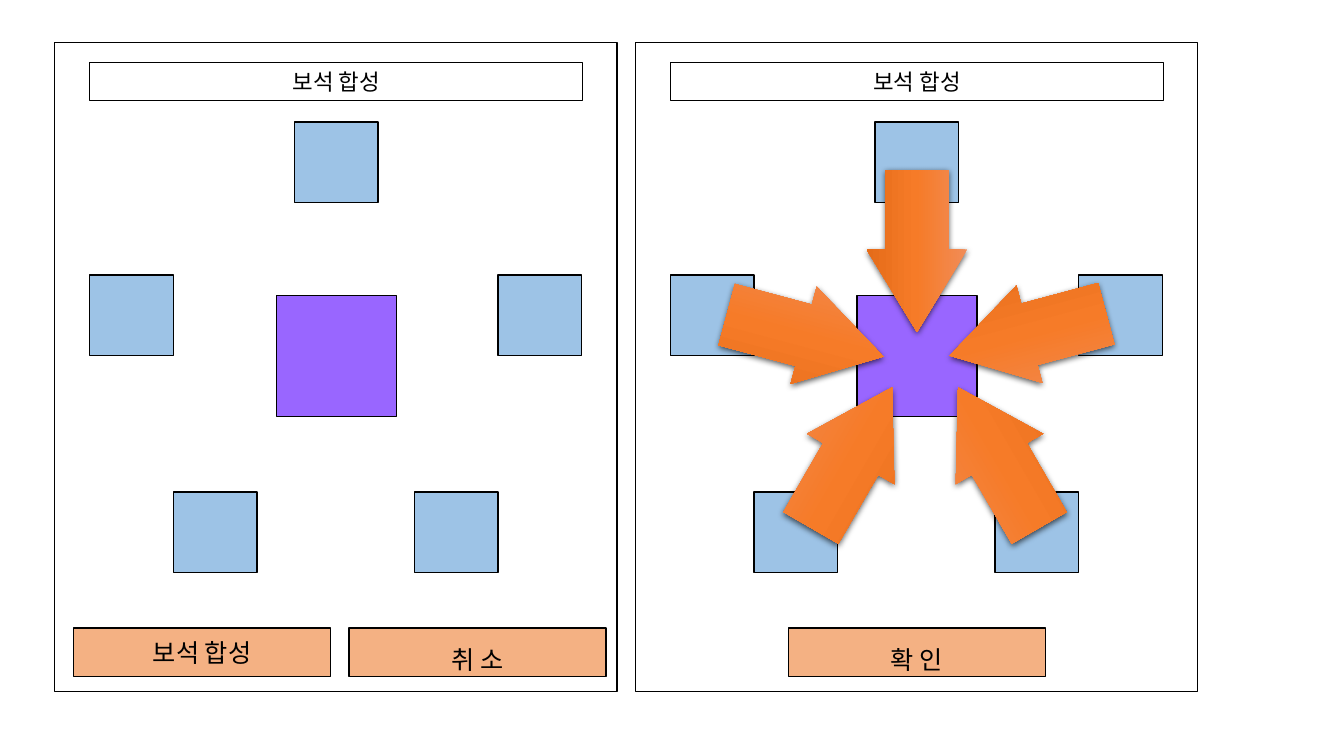
import lxml.etree
import pptx
import pptx.dml.color
import pptx.enum.shapes
import pptx.enum.text
import pptx.oxml.ns
import pptx.util

Inches = pptx.util.Inches
Pt = pptx.util.Pt
SHAPE = pptx.enum.shapes.MSO_SHAPE
qn = pptx.oxml.ns.qn

FONT = "Noto Sans CJK KR"
BLACK, WHITE = "000000", "FFFFFF"
BLUE, PURPLE, PEACH = "9DC3E6", "9966FF", "F4B183"
PANEL_LEFTS = (0.54, 6.3)

# Offsets from the panel's left edge, then tops on the slide
GEMS = ((2.38, 1.21), (0.35, 2.73), (4.4, 2.73), (1.18, 4.88), (3.57, 4.88))
# Left, top, rotation
ARROWS = (
    (7.18, 2.83, 15),
    (7.64, 4.04, 300),
    (9.39, 2.82, 165),
    (8.29, 1.99, 90),
    (9.1, 4.04, 240),
)
STOPS = ((0, "F18C57"), (50, "F67B28"), (100, "E56C19"))


def color(text):
    return pptx.dml.color.RGBColor.from_string(text)


def add_box(shapes, left, top, width, height, fill):
    box = shapes.add_shape(
        SHAPE.RECTANGLE, Inches(left), Inches(top), Inches(width), Inches(height)
    )
    box.shadow.inherit = False
    box.fill.solid()
    box.fill.fore_color.rgb = color(fill)
    box.line.color.rgb = color(BLACK)
    box.line.width = Pt(1)
    return box


def add_label(box, text, size, spacing=None):
    frame = box.text_frame
    frame.text = text
    frame.vertical_anchor = pptx.enum.text.MSO_ANCHOR.MIDDLE
    line = frame.paragraphs[0]
    line.alignment = pptx.enum.text.PP_ALIGN.CENTER
    line.line_spacing = spacing
    font = line.runs[0].font
    font.size = Pt(size)
    font.name = FONT
    font.color.rgb = color(BLACK)
    props = line.runs[0]._r.get_or_add_rPr()
    lxml.etree.SubElement(props, qn("a:ea"), typeface=FONT)


def add_button(shapes, left, text, spacing=None):
    box = add_box(shapes, left, 6.23, 2.55, 0.48, PEACH)
    add_label(box, text, 18, spacing)


def add_panel(shapes, left):
    """Draw the frame, title, five outer gems and the central gem."""
    add_box(shapes, left, 0.42, 5.58, 6.44, WHITE)
    title = add_box(shapes, left + 0.35, 0.62, 4.89, 0.38, WHITE)
    add_label(title, "보석 합성", 16)
    for shift, top in GEMS:
        add_box(shapes, left + shift, top, 0.83, 0.8, BLUE)
    add_box(shapes, left + 2.2, 2.93, 1.19, 1.2, PURPLE)


def set_blend(shape):
    """Fill the shape with the three-stop orange gradient."""
    shape.fill.gradient()
    shape.fill.gradient_angle = 270
    stops = next(shape._element.spPr.iter(qn("a:gsLst")))
    stops.clear()
    for place, tint in STOPS:
        stop = lxml.etree.SubElement(stops, qn("a:gs"), pos=str(place * 1000))
        lxml.etree.SubElement(stop, qn("a:srgbClr"), val=tint)


def set_shadow(shape):
    shape.shadow.inherit = False
    effects = shape._element.spPr.find(qn("a:effectLst"))
    shadow = lxml.etree.SubElement(
        effects,
        qn("a:outerShdw"),
        blurRad=str(Pt(4.5)),
        dist=str(Pt(1.5)),
        dir="5400000",
        algn="ctr",
        rotWithShape="0",
    )
    tint = lxml.etree.SubElement(shadow, qn("a:srgbClr"), val=BLACK)
    lxml.etree.SubElement(tint, qn("a:alpha"), val="63000")


def add_arrow(shapes, left, top, turn):
    arrow = shapes.add_shape(
        SHAPE.RIGHT_ARROW, Inches(left), Inches(top), Inches(1.61), Inches(1)
    )
    arrow.rotation = turn
    arrow.adjustments[0] = 0.63
    arrow.adjustments[1] = 0.82
    set_blend(arrow)
    arrow.line.fill.background()
    set_shadow(arrow)


def main():
    deck = pptx.Presentation()
    deck.slide_width = Inches(13.33)
    deck.slide_height = Inches(7.5)
    slide = deck.slides.add_slide(deck.slide_layouts[6])

    before, after = (slide.shapes.add_group_shape().shapes for _ in PANEL_LEFTS)
    for shapes, left in zip((before, after), PANEL_LEFTS):
        add_panel(shapes, left)

    add_button(before, 3.46, "취 소", 1.5)
    add_button(before, 0.73, "보석 합성")
    add_button(after, 7.82, "확 인", 1.5)
    for left, top, turn in ARROWS:
        add_arrow(after, left, top, turn)

    deck.save("out.pptx")


if __name__ == "__main__":
    main()
